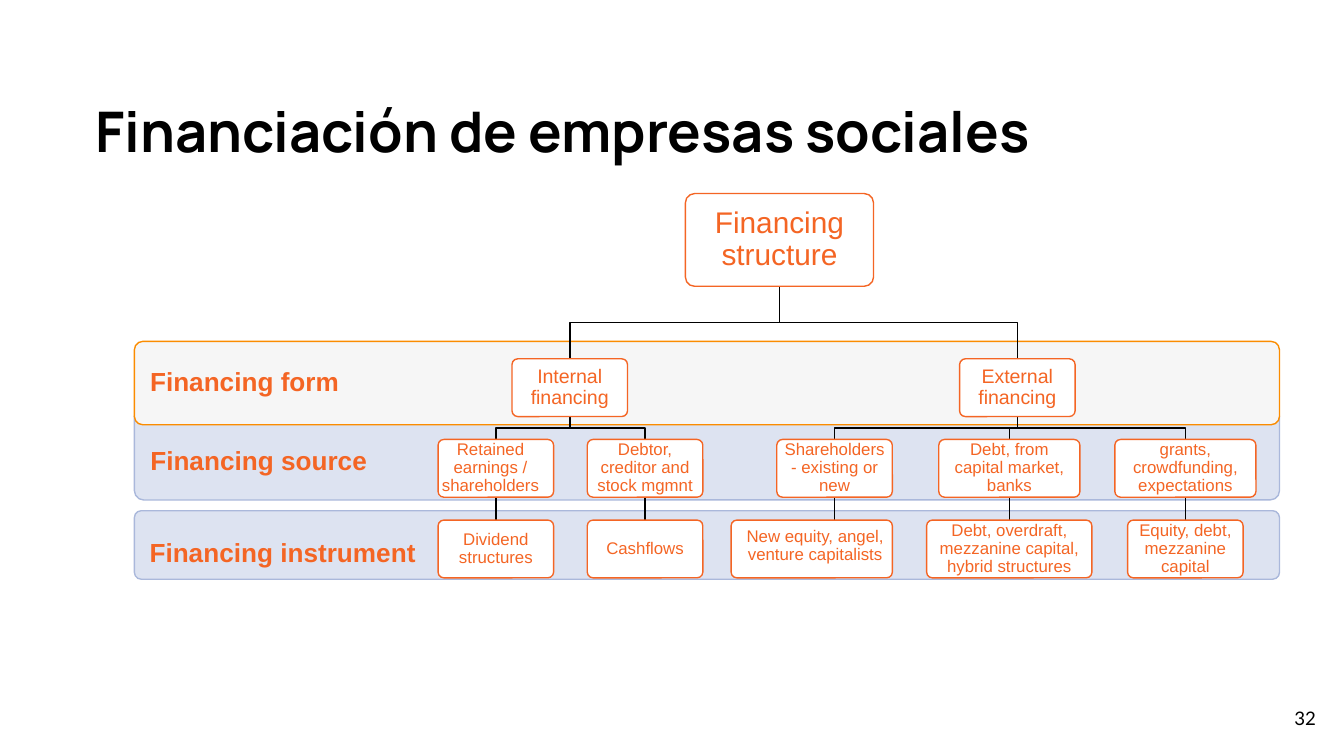
from dataclasses import dataclass
from typing import Any

from lxml.etree import SubElement
from pptx import Presentation
from pptx.dml.color import RGBColor
from pptx.enum.shapes import MSO_CONNECTOR, MSO_SHAPE
from pptx.enum.text import MSO_ANCHOR, PP_ALIGN
from pptx.oxml.ns import qn
from pptx.util import Inches, Pt

UNIT = Inches(0.1)
COLS, ROWS = 100, 56.25


@dataclass(frozen=True)
class Theme:
    accent: str = "F46524"
    ink: str = "000000"
    paper: str = "FFFFFF"
    blue: str = "DDE3F1"
    blue_line: str = "AAB8DB"
    gray: str = "F6F6F6"
    amber: str = "FB8C00"
    body_font: str = "Arial"
    title_font: str = "Manrope"
    number_font: str = "Lato"
    title: float = 30
    root: float = 16
    label: float = 14
    form: float = 10.5
    leaf: float = 9
    number: float = 10
    line: float = 0.75


@dataclass(frozen=True)
class Band:
    text: str
    row: float
    rows: float
    fill: str
    line: str
    drop: float = 0


@dataclass(frozen=True)
class Level:
    row: float
    rows: float
    size: float
    pad: float

    @property
    def bottom(self) -> float:
        return self.row + self.rows


@dataclass(frozen=True)
class Node:
    text: str
    center: float
    cols: float = 8.6
    children: tuple["Node", ...] = ()
    pads: tuple[float, float, float] | None = None


THEME = Theme()
BANDS = (
    Band("Financing instrument", 38, 5.1, THEME.blue, THEME.blue_line, 1.4),
    Band("Financing source", 30.3, 6.9, THEME.blue, THEME.blue_line, 1.2),
    Band("Financing form", 25.4, 6.2, THEME.gray, THEME.amber),
)
LEVELS = (
    Level(14.4, 6.9, THEME.root, 0.9),
    Level(26.7, 4.3, THEME.form, 0.5),
    Level(32.7, 4.3, THEME.leaf, 0.3),
    Level(38.7, 4.3, THEME.leaf, 0.3),
)
TREE = Node("Financing structure", 58, 14, (
    Node("Internal financing", 42.4, children=(
        Node("Retained earnings / shareholders", 36.9, pads=(-0.2, 0.6, 0), children=(
            Node("Dividend structures", 36.9),)),
        Node("Debtor, creditor and stock mgmnt", 48, children=(
            Node("Cashflows", 48),)),
    )),
    Node("External financing", 75.7, children=(
        Node("Shareholders - existing or new", 62.1, children=(
            Node("New equity, angel, venture capitalists", 60.4, 12, pads=(0.5, 0, 0.4)),)),
        Node("Debt, from capital market, banks", 75.1, 10.5, (
            Node("Debt, overdraft, mezzanine capital, hybrid structures", 75.1, 12.3),)),
        Node("grants, crowdfunding, expectations", 88.2, 10.5, (
            Node("Equity, debt, mezzanine capital", 88.2),)),
    )),
))


def grid(n: float) -> int:
    return round(n * UNIT)


def set_attrs(obj: Any, values: dict[str, Any]) -> None:
    for name, value in values.items():
        setattr(obj, name, value)


def write(sp: Any, text: str, size: float, color: str, font: str, bold: bool = False,
          align: Any = PP_ALIGN.LEFT, anchor: Any = MSO_ANCHOR.MIDDLE,
          spacing: float = 1.0, pads: tuple[float, float, float, float] = (0, 0, 0, 0)) -> None:
    tf = sp.text_frame
    left, top, right, bottom = map(grid, pads)
    set_attrs(tf, {"word_wrap": True, "vertical_anchor": anchor, "margin_left": left,
                   "margin_top": top, "margin_right": right, "margin_bottom": bottom})
    p = tf.paragraphs[0]
    set_attrs(p, {"alignment": align, "line_spacing": spacing})
    r = p.add_run()
    r.text = text
    set_attrs(r.font, {"size": Pt(size), "name": font, "bold": bold})
    r.font.color.rgb = RGBColor.from_string(color)


def outline(sp: Any, color: str) -> None:
    sp.line.color.rgb = RGBColor.from_string(color)
    sp.line.width = Pt(THEME.line)


def panel(s: Any, col: float, row: float, cols: float, rows: float, fill: str, line: str) -> Any:
    sp = s.shapes.add_shape(MSO_SHAPE.ROUNDED_RECTANGLE, *map(grid, (col, row, cols, rows)))
    sp.adjustments[0] = 0.1
    sp.shadow.inherit = False
    sp.fill.solid()
    sp.fill.fore_color.rgb = RGBColor.from_string(fill)
    outline(sp, line)
    return sp


def draw_band(s: Any, band: Band) -> None:
    sp = panel(s, 10, band.row, 85.2, band.rows, band.fill, band.line)
    write(sp, band.text, THEME.label, THEME.accent, THEME.body_font, bold=True,
          spacing=0.9, pads=(1, band.drop, 58, 0))


def draw_elbow(s: Any, x1: float, y1: float, x2: float, y2: float) -> None:
    mid = (y1 + y2) / 2
    builder = s.shapes.build_freeform(grid(x1), grid(y1))
    builder.add_line_segments(
        [(grid(x), grid(y)) for x, y in ((x1, mid), (x2, mid), (x2, y2))], close=False)
    sp = builder.convert_to_shape()
    sp.shadow.inherit = False
    sp.fill.background()
    outline(sp, THEME.ink)


def draw_drop(s: Any, x: float, y1: float, y2: float) -> None:
    sp = s.shapes.add_connector(MSO_CONNECTOR.STRAIGHT, *map(grid, (x, y1, x, y2)))
    outline(sp, THEME.ink)
    SubElement(sp.element.spPr, qn("a:effectLst"))


def draw_node(s: Any, node: Node, depth: int = 0) -> None:
    level = LEVELS[depth]
    for child in node.children:
        below = LEVELS[depth + 1].row
        if len(node.children) == 1:
            draw_drop(s, node.center, level.bottom, below)
        else:
            draw_elbow(s, node.center, level.bottom, child.center, below)
        draw_node(s, child, depth + 1)
    sp = panel(s, node.center - node.cols / 2, level.row, node.cols, level.rows,
               THEME.paper, THEME.accent)
    left, right, bottom = node.pads or (level.pad, level.pad, 0)
    write(sp, node.text, level.size, THEME.accent, THEME.body_font,
          align=PP_ALIGN.CENTER, spacing=0.9, pads=(left, 0, right, bottom))


def place_title(s: Any, text: str) -> None:
    sp = s.shapes.title
    set_attrs(sp, {"left": grid(7.1), "top": grid(7.2), "width": grid(73.3), "height": grid(3)})
    write(sp, text, THEME.title, THEME.ink, THEME.title_font, bold=True, anchor=MSO_ANCHOR.TOP)


def place_number(s: Any, text: str) -> None:
    sp = s.shapes.add_textbox(*map(grid, (92.9, 51.3, 6, 4.3)))
    write(sp, text, THEME.number, THEME.ink, THEME.number_font,
          align=PP_ALIGN.RIGHT, pads=(1, 1, 1, 1))


def main() -> None:
    prs = Presentation()
    set_attrs(prs, {"slide_width": grid(COLS), "slide_height": grid(ROWS)})
    s = prs.slides.add_slide(prs.slide_layouts.get_by_name("Title Only"))
    for band in BANDS:
        draw_band(s, band)
    draw_node(s, TREE)
    place_title(s, "Financiación de empresas sociales")
    place_number(s, "32")
    prs.save("out.pptx")


if __name__ == "__main__":
    main()
